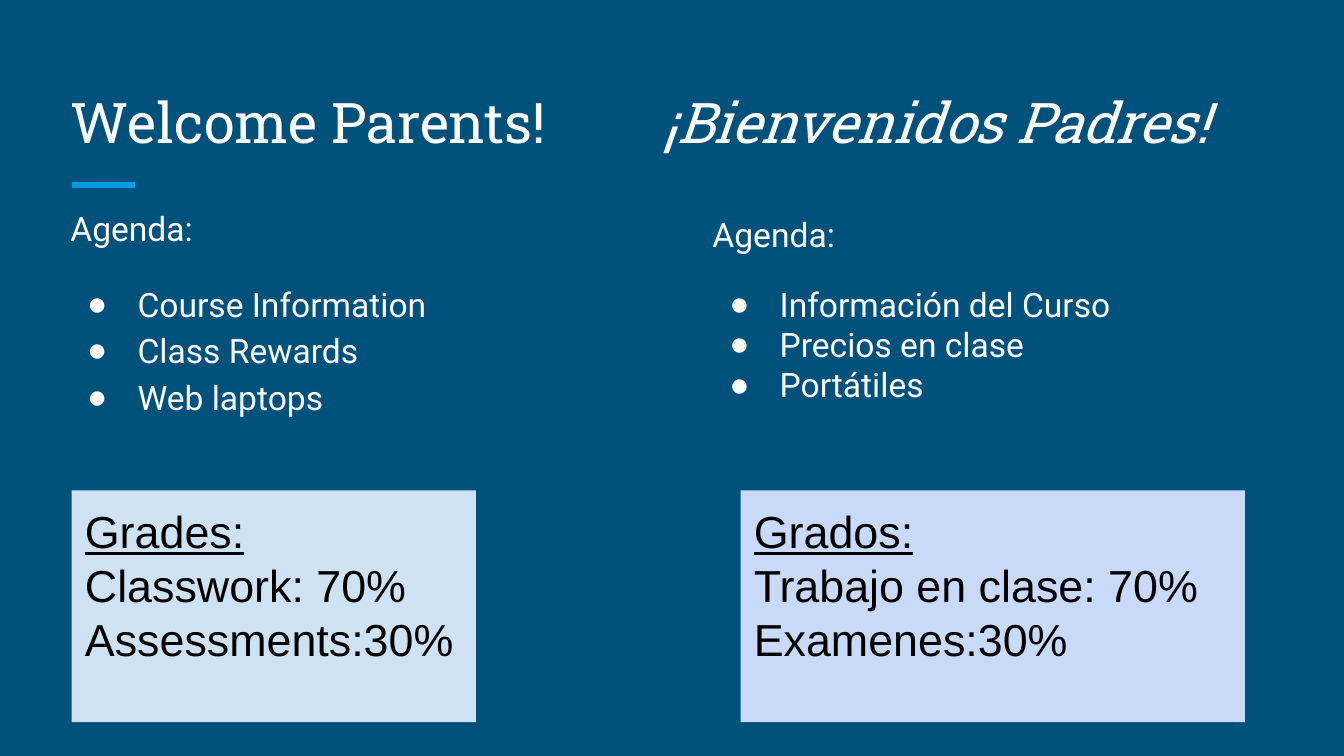
from lxml.etree import SubElement
from pptx import Presentation
from pptx.dml.color import RGBColor
from pptx.enum.shapes import MSO_CONNECTOR, MSO_SHAPE
from pptx.enum.text import MSO_ANCHOR, PP_ALIGN
from pptx.oxml.ns import qn
from pptx.util import Pt

WHITE, BLACK = "FFFFFF", "000000"
INSET = Pt(7.2)


def color(value):
    return RGBColor.from_string(value)


def add_run(paragraph, text, **font_values):
    run = paragraph.add_run()
    run.text = text
    font_color = font_values.pop("color")
    for name, value in font_values.items():
        setattr(run.font, name, value)
    run.font.color.rgb = color(font_color)


presentation = Presentation()
presentation.slide_width, presentation.slide_height = Pt(720), Pt(405)
slide = presentation.slides.add_slide(presentation.slide_layouts[6])
slide.background.fill.solid()
slide.background.fill.fore_color.rgb = color("00517C")

frame_format = {
    "word_wrap": True,
    "margin_left": INSET,
    "margin_top": INSET,
    "margin_right": INSET,
    "margin_bottom": INSET,
}

# Accent line under the title
accent = slide.shapes.add_connector(
    MSO_CONNECTOR.STRAIGHT, Pt(38.6), Pt(99.2), Pt(72.2), Pt(99.2)
)
accent.line.color.rgb = color("039BE5")
accent.line.width = Pt(3)
SubElement(accent._element.spPr, qn("a:effectLst"))

# Title: the Spanish half starts at a tab stop
title = slide.shapes.add_textbox(Pt(30.6), Pt(36), Pt(659), Pt(54))
for name, value in frame_format.items():
    setattr(title.text_frame, name, value)
title.text_frame.vertical_anchor = MSO_ANCHOR.BOTTOM
paragraph = title.text_frame.paragraphs[0]
tab_list = SubElement(paragraph._p.get_or_add_pPr(), qn("a:tabLst"))
SubElement(tab_list, qn("a:tab"), pos=str(Pt(318)), algn="l")
title_font = {"name": "Roboto Slab", "size": Pt(30), "color": WHITE}
add_run(paragraph, "Welcome Parents!\t", **title_font)
add_run(paragraph, "¡Bienvenidos Padres!", italic=True, **title_font)

# Agendas: left, top, height, line spacing, bullet items
agendas = [
    (30.6, 100.8, 158.4, 1.15,
     ["Course Information", "Class Rewards", "Web laptops"]),
    (374.6, 107.2, 145.4, 1.0,
     ["Información del Curso", "Precios en clase", "Portátiles"]),
]
for left, top, height, line_spacing, items in agendas:
    agenda = slide.shapes.add_textbox(Pt(left), Pt(top), Pt(315), Pt(height))
    text_frame = agenda.text_frame
    for name, value in frame_format.items():
        setattr(text_frame, name, value)
    for index, text in enumerate(["Agenda:"] + items):
        paragraph = text_frame.add_paragraph() if index else text_frame.paragraphs[0]
        paragraph.line_spacing = line_spacing
        if index:
            paragraph.space_before = Pt(16 if index == 1 else 0)
            properties = paragraph._p.get_or_add_pPr()
            properties.set("marL", str(Pt(36)))
            properties.set("indent", str(Pt(-27)))
            bullet_color = SubElement(properties, qn("a:buClr"))
            SubElement(bullet_color, qn("a:srgbClr"), val=WHITE)
            SubElement(properties, qn("a:buFont"), typeface="Arial")
            SubElement(properties, qn("a:buChar"), char="●")
        add_run(paragraph, text, name="Roboto", size=Pt(18), color=WHITE)

# Grade boxes: left, width, fill, lines with the heading first
grade_boxes = [
    (38.4, 216.6, "CFE2F3", ["Grades:", "Classwork: 70%", "Assessments:30%"]),
    (396.8, 270.2, "C9DAF8", ["Grados:", "Trabajo en clase: 70%", "Examenes:30%"]),
]
for left, width, fill, lines in grade_boxes:
    box = slide.shapes.add_shape(
        MSO_SHAPE.RECTANGLE, Pt(left), Pt(262.7), Pt(width), Pt(124.2)
    )
    box.shadow.inherit = False
    box.fill.solid()
    box.fill.fore_color.rgb = color(fill)
    box.line.fill.background()
    text_frame = box.text_frame
    for name, value in frame_format.items():
        setattr(text_frame, name, value)
    text_frame.vertical_anchor = MSO_ANCHOR.TOP
    for index, text in enumerate(lines):
        paragraph = text_frame.add_paragraph() if index else text_frame.paragraphs[0]
        paragraph.alignment = PP_ALIGN.LEFT
        add_run(paragraph, text, name="Arial", size=Pt(24), color=BLACK,
                underline=index == 0)

presentation.save("out.pptx")
